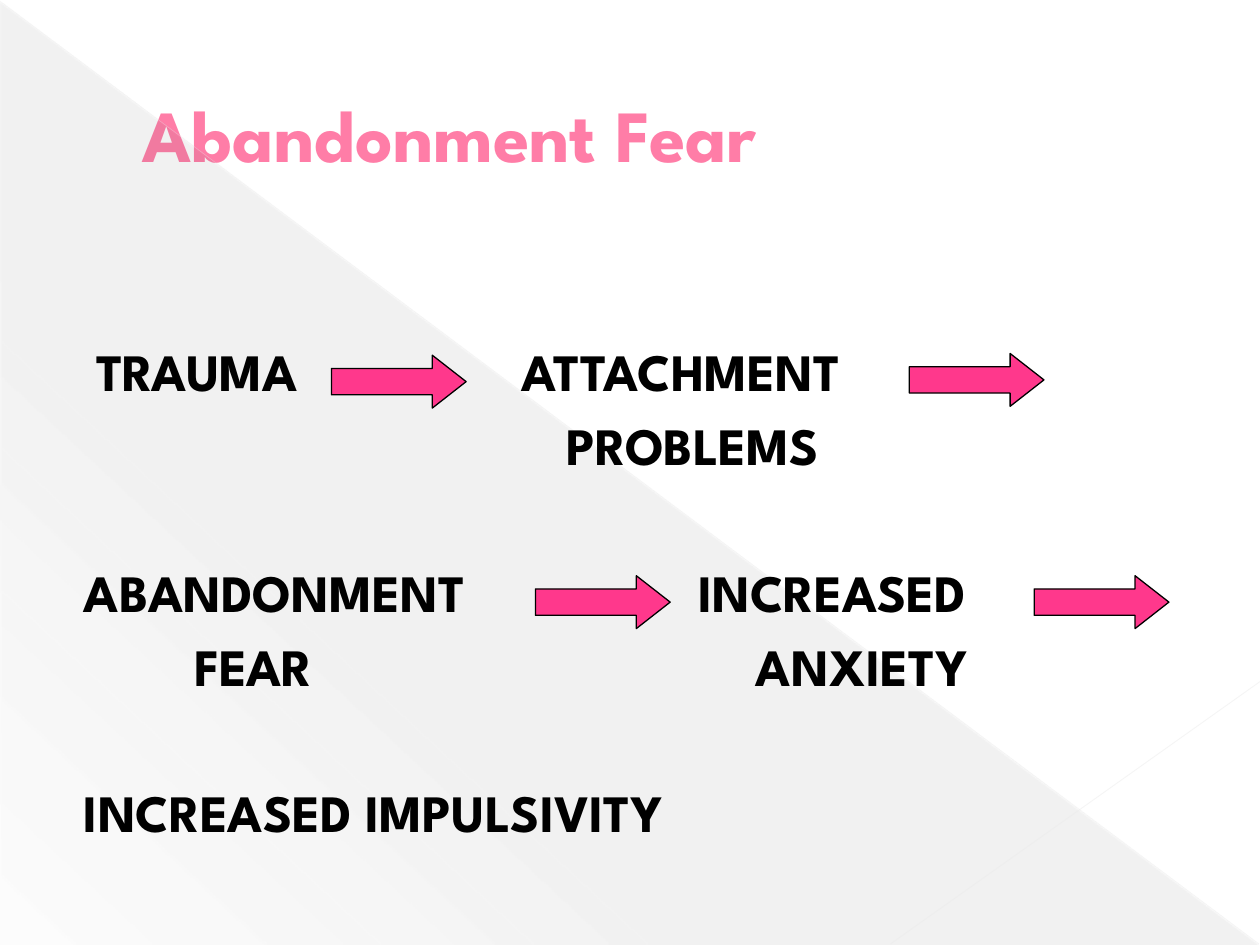
import pptx
import pptx.dml.color
import pptx.enum.shapes
import pptx.enum.text
import pptx.oxml
import pptx.oxml.ns
import pptx.util
from lxml import etree

Pt = pptx.util.Pt
RGBColor = pptx.dml.color.RGBColor
qn = pptx.oxml.ns.qn
SHAPES = pptx.enum.shapes.MSO_SHAPE
ANCHORS = pptx.enum.text.MSO_ANCHOR

WHITE = RGBColor(0xFF, 0xFF, 0xFF)
BLACK = RGBColor(0x00, 0x00, 0x00)
TITLE_PINK = RGBColor(0xFF, 0x7D, 0xA7)
ARROW_PINK = RGBColor(0xFF, 0x38, 0x8C)
SHADE_GRAY = RGBColor(0x66, 0x66, 0x66)
EDGE_GRAY = RGBColor(0xE8, 0xE8, 0xE8)
CORNER_GRAY = RGBColor(0xEA, 0xEA, 0xEA)

FONT = "League Spartan"
ROW_TOP = 194
ROW_STEP = 126


def format_run(run, size, color):
    run.font.name = FONT
    run.font.size = Pt(size)
    run.font.bold = True
    run.font.color.rgb = color


def add_shaded_triangle(slide):
    triangle = slide.shapes.add_shape(
        SHAPES.RIGHT_TRIANGLE, Pt(0.5), Pt(1.5), Pt(718.8), Pt(538.5))
    triangle.shadow.inherit = False
    triangle.line.fill.background()
    triangle.fill.gradient()
    gradient = triangle._element.spPr.find(qn("a:gradFill"))
    stops = gradient.find(qn("a:gsLst"))
    for stop in list(stops):
        stops.remove(stop)
    for position, opacity in ((0, 10), (70, 8), (100, 1)):
        stop = etree.SubElement(stops, qn("a:gs"), pos=str(position * 1000))
        color = etree.SubElement(stop, qn("a:srgbClr"), val=str(SHADE_GRAY))
        etree.SubElement(color, qn("a:alpha"), val=str(opacity * 1000))
    gradient.find(qn("a:lin")).set("ang", str(133 * 60000))


def add_faint_line(slide, start, end, color, width, opacity):
    line = slide.shapes.add_connector(
        pptx.enum.shapes.MSO_CONNECTOR.STRAIGHT, *map(Pt, start + end))
    line.line.color.rgb = color
    line.line.width = Pt(width)
    properties = line._element.spPr
    color_element = properties.find(".//" + qn("a:srgbClr"))
    etree.SubElement(color_element, qn("a:alpha"), val=str(opacity * 1000))
    etree.SubElement(properties, qn("a:effectLst"))


def format_title(slide, wording):
    title = slide.shapes.title
    title.left, title.top, title.width, title.height = map(Pt, (36, 21, 648, 110))
    frame = title.text_frame
    frame.text = wording
    frame.word_wrap = True
    frame.vertical_anchor = ANCHORS.MIDDLE
    frame.margin_left = Pt(45.4)
    heading = frame.paragraphs[0]
    heading.alignment = pptx.enum.text.PP_ALIGN.LEFT
    format_run(heading.runs[0], 42, TITLE_PINK)


def add_step(slide, row, left, width, lines, second_indent=0):
    step = slide.shapes.add_textbox(
        Pt(left), Pt(ROW_TOP + row * ROW_STEP), Pt(width), Pt(42 * len(lines)))
    frame = step.text_frame
    frame.word_wrap = True
    frame.margin_left = frame.margin_right = 0
    frame.margin_top = frame.margin_bottom = 0
    frame.text = "\n".join(lines)
    for paragraph in frame.paragraphs:
        format_run(paragraph.runs[0], 30, BLACK)
    for paragraph in frame.paragraphs[1:]:
        paragraph.space_before = Pt(6)
        paragraph._p.get_or_add_pPr().set("marL", str(Pt(second_indent)))


def add_arrow(slide, left, top):
    arrow = slide.shapes.add_shape(
        SHAPES.RIGHT_ARROW, Pt(left), Pt(top), Pt(77), Pt(30.2))
    arrow.adjustments[0] = 0.5
    arrow.adjustments[1] = 0.64
    arrow.shadow.inherit = False
    arrow.fill.solid()
    arrow.fill.fore_color.rgb = ARROW_PINK
    arrow.line.color.rgb = BLACK
    arrow.line.width = Pt(0.75)


def main():
    deck = pptx.Presentation()
    deck.slide_width, deck.slide_height = Pt(720), Pt(540)
    slide = deck.slides.add_slide(deck.slide_layouts.get_by_name("Title Only"))
    slide.background.fill.solid()
    slide.background.fill.fore_color.rgb = WHITE

    add_shaded_triangle(slide)
    add_faint_line(slide, (0, 0.7), (719.3, 539.3), EDGE_GRAY, 0.39, 35)
    add_faint_line(slide, (720, 389.5), (509, 539.3), CORNER_GRAY, 0.47, 45)
    format_title(slide, "Abandonment Fear")

    add_step(slide, 0, 55, 130, ["TRAUMA"])
    add_step(slide, 0, 298, 200, ["ATTACHMENT", "PROBLEMS"], 26)
    add_step(slide, 1, 48, 240, ["ABANDONMENT", "FEAR"], 63)
    add_step(slide, 1, 399, 180, ["INCREASED", "ANXIETY"], 33)
    add_step(slide, 2, 48, 380, ["INCREASED IMPULSIVITY"])

    for left, top in ((189.4, 203), (519.6, 202), (306, 329), (591, 329)):
        add_arrow(slide, left, top)

    deck.save("out.pptx")


if __name__ == "__main__":
    main()
